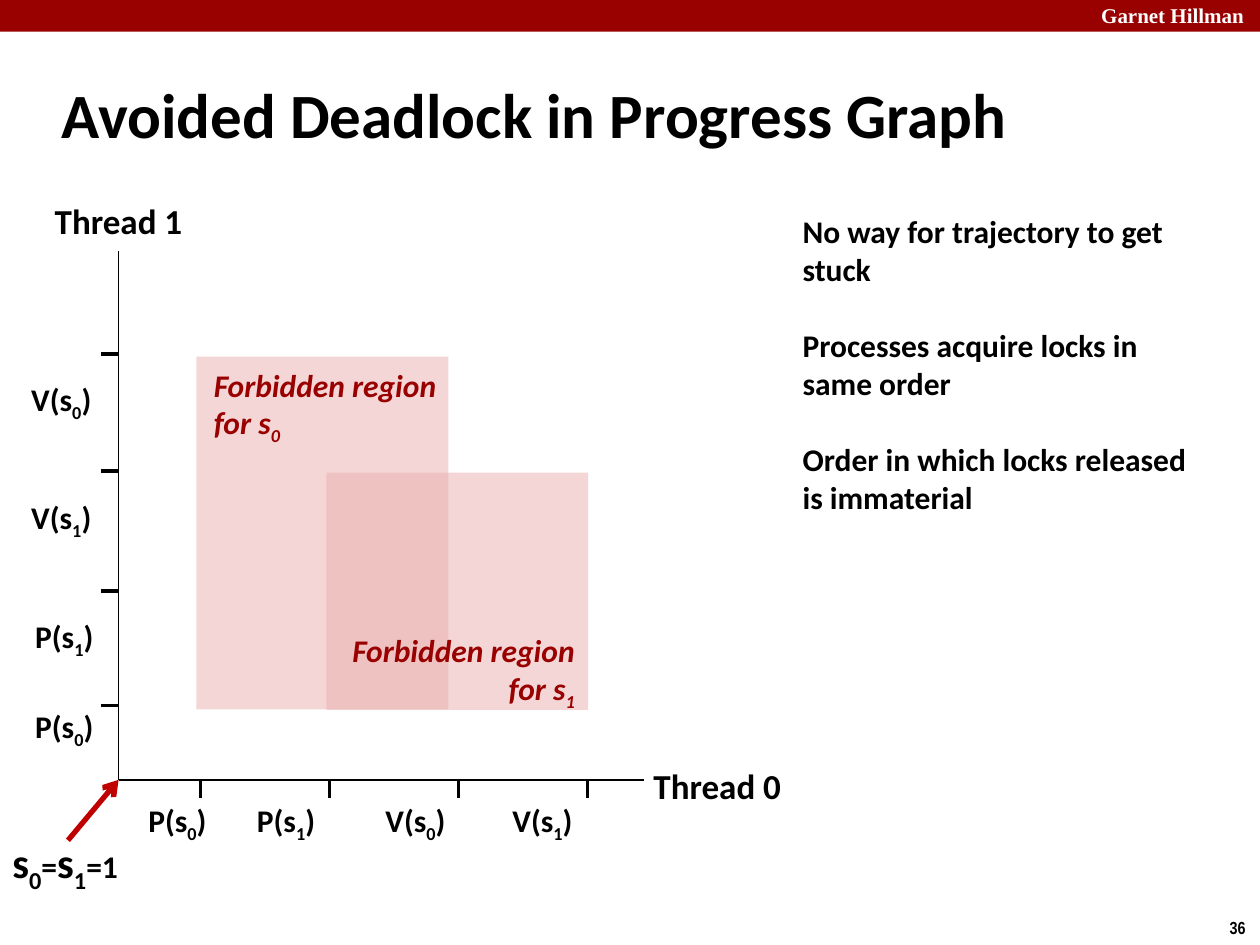
from dataclasses import dataclass

from lxml import etree
from pptx import Presentation
from pptx import util as u
from pptx.dml.color import RGBColor
from pptx.enum import shapes, text
from pptx.oxml.ns import qn


@dataclass(frozen=True)
class Theme:
    body: str = "Calibri"
    black: str = "000000"
    white: str = "FFFFFF"
    crimson: str = "990000"
    arrow: str = "C00000"
    region: str = "EBAFAF"
    title: int = 36
    state: int = 24
    axis: int = 20
    label: int = 18
    header: int = 12
    number: int = 10


THEME = Theme()
LEFT, CENTER, RIGHT = text.PP_ALIGN.LEFT, text.PP_ALIGN.CENTER, text.PP_ALIGN.RIGHT
MIDDLE, TOP = text.MSO_ANCHOR.MIDDLE, text.MSO_ANCHOR.TOP

TITLE = "Avoided Deadlock in Progress Graph"
HEADER = "Garnet Hillman"
NUMBER = "36"
NOTES = [
    "No way for trajectory to get stuck",
    "Processes acquire locks in same order",
    "Order in which locks released is immaterial",
]
ORIGIN_X, ORIGIN_Y = 2.39, 15.72
AXIS_RIGHT, AXIS_TOP = 12.98, 5.05
TICK = 0.36
AXIS_NAMES = [
    ("Thread 0", (12.9, 15.27, 3.12, 1.12)),
    ("Thread 1", (0.84, 3.89, 3.1, 1.12)),
]
LABEL_SIZE = (1.74, 1.02)
THREAD_0 = [("P", "0", 2.74), ("P", "1", 4.93), ("V", "0", 7.52), ("V", "1", 10.08)]
THREAD_1 = [("P", "0", 14.17), ("P", "1", 12.37), ("V", "1", 9.96), ("V", "0", 7.59)]
THREAD_1_LEFT = {"P": 0.46, "V": 0.38}
TICKS_0 = [4.04 + 2.6 * step for step in range(4)]
TICKS_1 = [14.22, 11.91, 9.5, 7.14]
REGIONS = [
    ("0", (3.96, 7.19, 5.08, 7.11), (4.06, 7.24, 5.23, 1.8), LEFT),
    ("1", (6.58, 9.53, 5.28, 4.78), (6.63, 12.6, 5.21, 1.8), RIGHT),
]
STATE = [("s", THEME.state), ("_0", THEME.state), ("=", THEME.label),
         ("s", THEME.state), ("_1", THEME.state), ("=1", THEME.label)]


def cm(values):
    return [u.Cm(value) for value in values]


def style(font, size, color=THEME.black, name=THEME.body, italic=None):
    font.name, font.size, font.bold, font.italic = name, u.Pt(size), True, italic
    font.color.rgb = RGBColor.from_string(color)


def add_text(page, place, lines, size=THEME.label, align=LEFT, anchor=TOP,
             wrap=False, inset=0.13, gap=0, **look):
    box = page.shapes.add_textbox(*cm(place))
    frame = box.text_frame
    frame.word_wrap = wrap
    frame.auto_size = text.MSO_AUTO_SIZE.SHAPE_TO_FIT_TEXT
    frame.vertical_anchor = anchor
    frame.margin_top = frame.margin_bottom = u.Cm(inset)
    for index, line in enumerate(lines):
        para = frame.add_paragraph() if index else frame.paragraphs[0]
        para.alignment = align
        if index and gap:
            para.space_before = u.Pt(gap)
        for words, points in ([(line, size)] if isinstance(line, str) else line):
            span = para.add_run()
            span.text = words.lstrip("_")
            style(span.font, points, **look)
            if words.startswith("_"):
                span.font._element.set("baseline", "-25000")


def add_line(page, start, end, width, color=THEME.black, arrow=False):
    line = page.shapes.add_connector(shapes.MSO_CONNECTOR.STRAIGHT, *cm(start + end))
    line.line.width = u.Pt(width)
    line.line.color.rgb = RGBColor.from_string(color)
    if arrow:
        etree.SubElement(line.line._get_or_add_ln(), qn("a:tailEnd"), type="arrow")
    etree.SubElement(line._element.spPr, qn("a:effectLst"))


def add_block(page, place, color, alpha=None):
    block = page.shapes.add_shape(shapes.MSO_SHAPE.RECTANGLE, *cm(place))
    block.shadow.inherit = False
    block.fill.solid()
    block.fill.fore_color.rgb = RGBColor.from_string(color)
    block.line.fill.background()
    if alpha:
        tint = block._element.spPr.find(qn("a:solidFill"))[0]
        etree.SubElement(tint, qn("a:alpha"), val=str(alpha * 1000))


def add_title(page):
    title = page.shapes.title
    title.left, title.top, title.width, title.height = cm((0.99, 1.22, 21.08, 2.11))
    title.text_frame.text = TITLE
    title.text_frame.vertical_anchor = MIDDLE
    para = title.text_frame.paragraphs[0]
    para.alignment = LEFT
    style(para.runs[0].font, THEME.title)


def add_frame(page):
    add_block(page, (0, 0, 25.4, 0.64), THEME.crimson)
    add_text(page, (21.95, -0.08, 3.63, 0.76), [HEADER], THEME.header, wrap=True,
             color=THEME.white, name="Times New Roman")
    add_text(page, (24.54, 18.36, 0.86, 0.69), [NUMBER], THEME.number, name="Arial Narrow")


def add_axes(page):
    origin = (ORIGIN_X, ORIGIN_Y)
    add_line(page, origin, (AXIS_RIGHT, ORIGIN_Y), 1)
    add_line(page, origin, (ORIGIN_X, AXIS_TOP), 1)
    for name, place in AXIS_NAMES:
        add_text(page, place, [name], THEME.axis, CENTER, MIDDLE)
    for x in TICKS_0:
        add_line(page, (x, ORIGIN_Y), (x, ORIGIN_Y + TICK), 2)
    for y in TICKS_1:
        add_line(page, (ORIGIN_X - TICK, y), (ORIGIN_X, y), 2)
    labels = [(action, lock, (x, ORIGIN_Y + TICK)) for action, lock, x in THREAD_0]
    labels += [(action, lock, (THREAD_1_LEFT[action], y)) for action, lock, y in THREAD_1]
    for action, lock, corner in labels:
        parts = [(word, THEME.label) for word in (f"{action}(s", f"_{lock}", ")")]
        add_text(page, corner + LABEL_SIZE, [parts], anchor=MIDDLE)


def add_regions(page):
    for _, area, _, _ in REGIONS:
        add_block(page, area, THEME.region, alpha=50)
    for lock, _, place, align in REGIONS:
        second = [("for s", THEME.label), (f"_{lock}", THEME.label)]
        add_text(page, place, ["Forbidden region", second], align=align,
                 color=THEME.crimson, italic=True)


def main():
    deck = Presentation()
    deck.slide_width, deck.slide_height = cm((25.4, 19.05))
    page = deck.slides.add_slide(deck.slide_layouts[5])
    add_frame(page)
    add_title(page)
    add_axes(page)
    add_regions(page)
    add_text(page, (0, 16.94, 2.74, 1.02), [STATE], anchor=MIDDLE, inset=0)
    add_line(page, (1.37, 16.94), (ORIGIN_X, ORIGIN_Y), 3, THEME.arrow, arrow=True)
    add_text(page, (15.93, 4.27, 8.64, 6.1), NOTES, wrap=True, inset=0, gap=22)
    deck.save("out.pptx")


if __name__ == "__main__":
    main()
